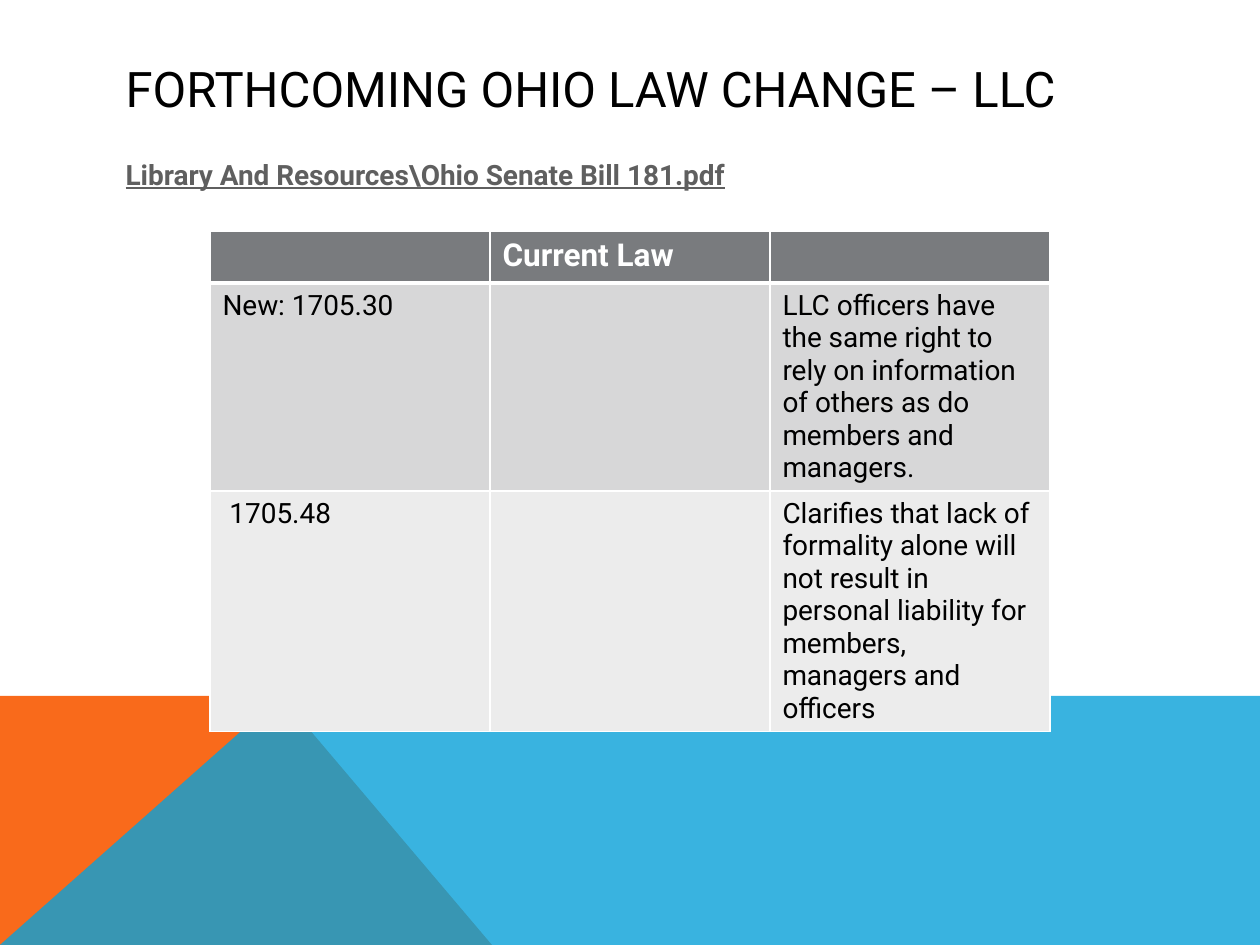
from dataclasses import dataclass

from lxml.etree import SubElement
from pptx import Presentation
from pptx.dml.color import RGBColor as RGB
from pptx.enum.text import MSO_ANCHOR as Anchor, MSO_AUTO_SIZE as Fit, PP_ALIGN as Align
from pptx.oxml.ns import qn
from pptx.util import Pt

PX = 914400 / 126
WIDE, HIGH = 1260, 945


@dataclass(frozen=True)
class Theme:
    font: str = "Roboto"
    black: str = "000000"
    white: str = "FFFFFF"
    link: str = "5F5F5F"
    orange: str = "F96A1B"
    blue: str = "08A1D9"
    head: str = "797B7E"
    bands: tuple = ("D7D7D8", "ECECEC")
    title: int = 28
    label: int = 18
    body: int = 16
    thin: int = 1
    thick: int = 3


THEME = Theme()
ROWS = [
    ["", "Current Law", ""],
    ["New: 1705.30", "", "LLC officers have the same right to rely on "
     "information of others as do members and managers."],
    [" 1705.48", "", "Clarifies that lack of formality alone will not result "
     "in personal liability for members, managers and officers"],
]


def px(n):
    return round(n * PX)


def style(para, size, color, bold=False, under=False):
    for run in para.runs:
        font = run.font
        font.name, font.size, font.bold = THEME.font, Pt(size), bold
        font.underline = under
        font.color.rgb = RGB.from_string(color)


def fill_holder(holder, box, text, anchor):
    """Place a placeholder, set its text and return the paragraph."""
    holder.left, holder.top, holder.width, holder.height = map(px, box)
    frame = holder.text_frame
    frame.text = text
    frame.word_wrap, frame.auto_size = True, Fit.NONE
    frame.vertical_anchor = anchor
    para = frame.paragraphs[0]
    para.alignment = Align.LEFT
    return para


def add_title(slide):
    para = fill_holder(slide.shapes.title, (113, 50, 1036, 76),
                       "FORTHCOMING OHIO LAW CHANGE – LLC", Anchor.MIDDLE)
    style(para, THEME.title, THEME.black)


def add_body(slide):
    para = fill_holder(slide.placeholders[1], (113, 151, 1036, 493),
                       "Library And Resources\\Ohio Senate Bill 181.pdf", Anchor.TOP)
    para.space_before = Pt(8)
    style(para, THEME.body, THEME.link, bold=True, under=True)
    props = para._p.get_or_add_pPr()
    props.set("marL", str(px(48)))
    props.set("indent", str(px(-48)))
    SubElement(props, qn("a:buNone"))


def add_wedge(slide, place, points, color, alpha=None):
    """Draw a footer polygon at the given place from the back."""
    start, *rest = points
    pen = slide.shapes.build_freeform(*start, scale=PX)
    pen.add_line_segments(rest, close=True)
    shape = pen.convert_to_shape()
    shape.shadow.inherit = False
    shape.line.fill.background()
    shape.fill.solid()
    shape.fill.fore_color.rgb = RGB.from_string(color)
    if alpha:
        tone = shape._element.spPr.find(f"{qn('a:solidFill')}/{qn('a:srgbClr')}")
        SubElement(tone, qn("a:alpha"), val=str(alpha * 1000))
    slide.shapes._spTree.insert(2 + place, shape._element)


def set_edges(cell, top, bottom):
    """Add white borders, ahead of the cell's fill."""
    props = cell._tc.get_or_add_tcPr()
    widths = {"L": THEME.thin, "R": THEME.thin, "T": top, "B": bottom}
    for place, (side, width) in enumerate(widths.items()):
        line = SubElement(props, qn(f"a:ln{side}"), w=str(Pt(width)))
        fill = SubElement(line, qn("a:solidFill"))
        SubElement(fill, qn("a:srgbClr"), val=THEME.white)
        props.insert(place, line)


def add_grid(slide):
    table = slide.shapes.add_table(len(ROWS), len(ROWS[0]), px(210), px(231),
                                   px(840), px(156)).table
    fills = (THEME.head, *THEME.bands)
    for r, row in enumerate(ROWS):
        head = r == 0
        size = THEME.label if head else THEME.body
        color = THEME.white if head else THEME.black
        top = THEME.thick if r == 1 else THEME.thin
        bottom = THEME.thick if head else THEME.thin
        for c, text in enumerate(row):
            cell = table.cell(r, c)
            cell.fill.solid()
            cell.fill.fore_color.rgb = RGB.from_string(fills[r])
            set_edges(cell, top, bottom)
            if text:
                cell.text = text
                style(cell.text_frame.paragraphs[0], size, color, bold=head)


def main():
    deck = Presentation()
    deck.slide_width, deck.slide_height = px(WIDE), px(HIGH)
    slide = deck.slides.add_slide(deck.slide_layouts[1])
    base, peak = 696, (281, 696)
    add_wedge(slide, 0, [(0, HIGH), (0, base), peak, (492, HIGH)], THEME.orange)
    add_wedge(slide, 1, [(0, HIGH), peak, (WIDE, base), (WIDE, HIGH)],
              THEME.blue, alpha=80)
    add_title(slide)
    add_body(slide)
    add_grid(slide)
    deck.save("out.pptx")


if __name__ == "__main__":
    main()
